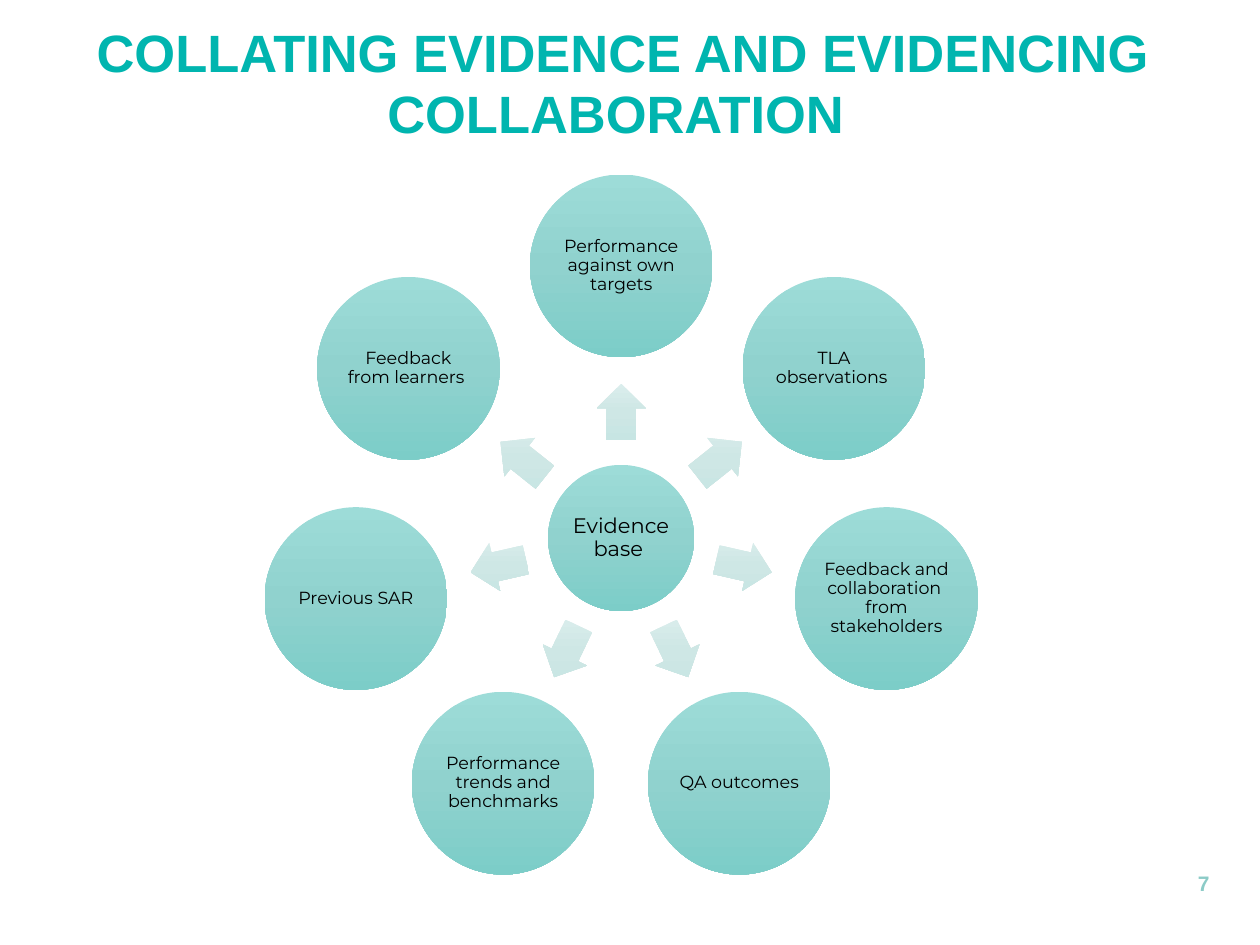
from math import cos, radians, sin

from pptx import Presentation
from pptx.dml.color import RGBColor
from pptx.enum.shapes import MSO_SHAPE as Preset
from pptx.enum.text import MSO_ANCHOR as Anchor, MSO_AUTO_SIZE as AutoSize, PP_ALIGN as Align
from pptx.oxml import parse_xml
from pptx.oxml.ns import nsdecls
from pptx.util import Inches, Pt

# Content
TITLE = "COLLATING EVIDENCE AND EVIDENCING COLLABORATION "
PAGE_NUMBER = "7"
HUB = "Evidence base "
SOURCES = [  # clockwise from the top
    "Performance against own targets",
    "TLA observations ",
    "Feedback and collaboration  from stakeholders",
    "QA outcomes",
    "Performance trends and benchmarks",
    "Previous SAR",
    "Feedback from learners ",
]

# Format
COLORS = {"title": "00B5AF", "number": "8CCBC7", "label": "000000"}
GRADIENTS = {
    "circle": ("9DDCD8", "90D2CE", "7CCDC8"),
    "arrow": ("DAEDEC", "CEE7E5", "C7E5E3"),
}
TITLE_FONT = {"name": "Arial", "size": Pt(30), "bold": True}
NUMBER_FONT = {"name": "Arial", "size": Pt(12), "bold": True}
HUB_FONT = {"name": "Montserrat", "size": Pt(12), "bold": False}
SOURCE_FONT = {"name": "Montserrat", "size": Pt(10), "bold": False}

# Geometry in inches
CENTER_X, CENTER_Y = 4.93, 4.27
CIRCLE_RADIUS, ARROW_RADIUS = 2.16, 1.0
HUB_SIZE, SOURCE_SIZE = 1.16, 1.45
ARROW_WIDTH, ARROW_HEIGHT = 0.45, 0.39


def write(shape, text, font, color, align, insets, anchor, spacing):
    frame = shape.text_frame
    frame.word_wrap = True
    frame.auto_size = AutoSize.NONE
    frame.vertical_anchor = anchor
    for side, inset in zip(("left", "top", "right", "bottom"), insets):
        setattr(frame, f"margin_{side}", Inches(inset))
    paragraph = frame.paragraphs[0]
    paragraph.alignment = align
    paragraph.line_spacing = spacing
    run = paragraph.add_run()
    run.text = text
    for key, value in font.items():
        setattr(run.font, key, value)
    run.font.color.rgb = RGBColor.from_string(COLORS[color])


def add_gradient_shape(slide, preset, x, y, width, height, gradient):
    """Add a borderless shape centred on x, y, shaded from top to bottom."""
    shape = slide.shapes.add_shape(
        preset, Inches(x - width / 2), Inches(y - height / 2), Inches(width), Inches(height))
    stops = "".join(
        f'<a:gs pos="{i * 50000}"><a:srgbClr val="{color}"/></a:gs>'
        for i, color in enumerate(GRADIENTS[gradient]))
    shape._element.spPr.append(parse_xml(
        f'<a:gradFill {nsdecls("a")} rotWithShape="0"><a:gsLst>{stops}</a:gsLst>'
        '<a:lin ang="5400000" scaled="0"/></a:gradFill>'))
    shape.line.fill.background()
    shape.shadow.inherit = False
    return shape


def add_circle(slide, x, y, size, text, font, inset):
    circle = add_gradient_shape(slide, Preset.OVAL, x, y, size, size, "circle")
    write(circle, text, font, "label", Align.CENTER, [inset] * 4, Anchor.MIDDLE, 0.9)


def on_ring(radius, angle):
    return (CENTER_X + radius * cos(radians(angle)),
            CENTER_Y + radius * sin(radians(angle)))


def main():
    prs = Presentation()
    prs.slide_width, prs.slide_height = Inches(10), Inches(7.5)
    slide = prs.slides.add_slide(prs.slide_layouts[5])

    # Title
    title = slide.shapes.title
    title.left, title.top, title.width, title.height = map(Inches, (0.39, 0.17, 9.21, 0.79))
    write(title, TITLE, TITLE_FONT, "title", Align.CENTER, (0, 0, 0.1, 0.05), Anchor.TOP, Pt(35))

    # Page number
    number = slide.shapes.add_textbox(*map(Inches, (9.04, 6.91, 0.56, 0.2)))
    write(number, PAGE_NUMBER, NUMBER_FONT, "number", Align.RIGHT,
          (0.1, 0.05, 0, 0.05), Anchor.MIDDLE, 1.0)

    # Hub with an arrow out to each source
    add_circle(slide, CENTER_X, CENTER_Y, HUB_SIZE, HUB, HUB_FONT, 0.02)
    for i, source in enumerate(SOURCES):
        angle = i * 360 / len(SOURCES) - 90
        arrow = add_gradient_shape(slide, Preset.RIGHT_ARROW, *on_ring(ARROW_RADIUS, angle),
                                   ARROW_WIDTH, ARROW_HEIGHT, "arrow")
        arrow.adjustments[0], arrow.adjustments[1] = 0.6, 0.5
        arrow.rotation = angle % 360
        add_circle(slide, *on_ring(CIRCLE_RADIUS, angle), SOURCE_SIZE, source, SOURCE_FONT, 0.01)

    prs.save("out.pptx")


if __name__ == "__main__":
    main()
